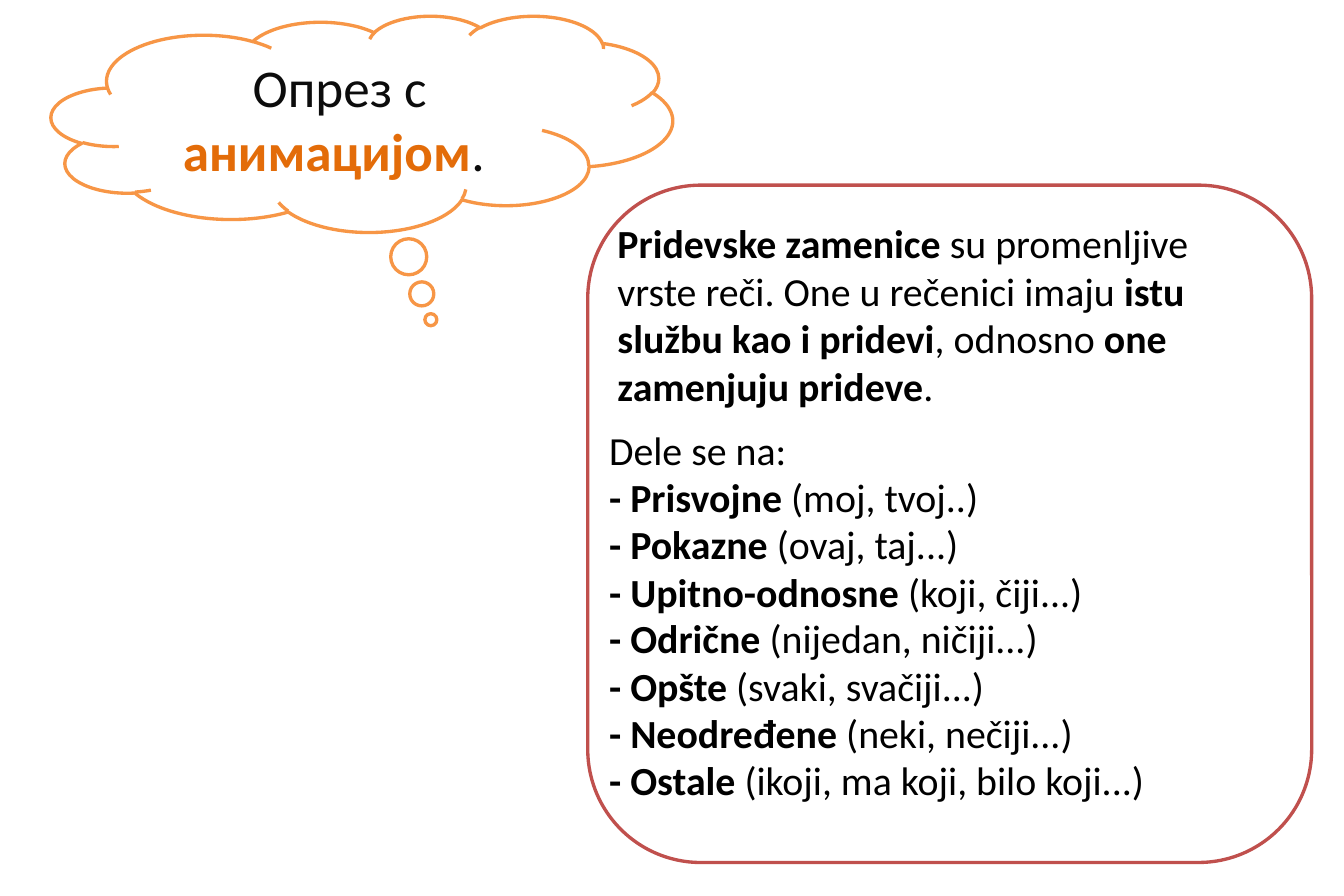
from pptx import Presentation
from pptx.dml.color import RGBColor
from pptx.enum import shapes, text
from pptx.util import Inches, Pt

COLORS = {
    "white": "FFFFFF", "black": "000000", "ink": "0C0C0C",
    "cloud": "F79646", "accent": "E36C09", "frame": "C0504D",
}


def add_outlined(kind, left, top, width, height, color, adjustments):
    """Add a white preset shape with a coloured outline."""
    shape = page.shapes.add_shape(
        kind, Inches(left), Inches(top), Inches(width), Inches(height))
    shape.shadow.inherit = False
    shape.fill.solid()
    shape.fill.fore_color.rgb = RGBColor.from_string(COLORS["white"])
    shape.line.color.rgb = RGBColor.from_string(COLORS[color])
    shape.line.width = Pt(2)
    for index, value in enumerate(adjustments):
        shape.adjustments[index] = value
    return shape


def write_spans(para, size, spans):
    """Fill a paragraph with (wording, bold, colour) spans."""
    para.font.name = "Calibri"
    para.font.size = Pt(size)
    for wording, bold, color in spans:
        span = para.add_run()
        span.text = wording
        span.font.bold = bold
        span.font.color.rgb = RGBColor.from_string(COLORS[color])


deck = Presentation()
deck.slide_width = Inches(11.25)
deck.slide_height = Inches(7.5)
page = deck.slides.add_slide(deck.slide_layouts[6])

cloud = add_outlined(shapes.MSO_SHAPE.CLOUD_CALLOUT,
                     0.43, 0.13, 5.2, 1.81, "cloud", [0.111, 0.907])
cloud.text_frame.vertical_anchor = text.MSO_ANCHOR.MIDDLE
warning = cloud.text_frame.paragraphs[0]
warning.alignment = text.PP_ALIGN.CENTER
write_spans(warning, 32, [
    ("Опрез с ", False, "ink"),
    ("анимацијом", True, "accent"),
    (". ", False, "ink"),
])

add_outlined(shapes.MSO_SHAPE.ROUNDED_RECTANGLE,
             4.92, 1.55, 6.06, 5.67, "frame", [0.167])

definition = [
    ("Pridevske zamenice", True),
    (" su promenljive vrste reči. One u rečenici imaju ", False),
    ("istu službu kao i pridevi", True),
    (", odnosno ", False),
    ("one zamenjuju prideve", True),
    (".", False),
]
kinds = [
    [("Dele se na:", False)],
    [("- Prisvojne ", True), ("(moj, tvoj..)", False)],
    [("- Pokazne ", True), ("(ovaj, taj...)", False)],
    [("- Upitno-odnosne ", True), ("(koji, čiji...)", False)],
    [("- Odrične ", True), ("(nijedan, ničiji...)", False)],
    [("- Opšte ", True), ("(svaki, svačiji...)", False)],
    [("- Neodređene ", True), ("(neki, nečiji...)", False)],
    [("- Ostale ", True), ("(ikoji, ma koji, bilo koji...)", False)],
]

# The definition stands alone; the list runs in boxes of two lines each.
blocks = [(5.07, 1.78, 1.72, [definition])]
for first in range(0, len(kinds), 2):
    blocks.append((5, 3.51 + 0.79 * first / 2, 0.91, kinds[first:first + 2]))

for left, top, height, lines in blocks:
    box = page.shapes.add_textbox(
        Inches(left), Inches(top), Inches(5.62), Inches(height))
    frame = box.text_frame
    frame.word_wrap = True
    for number, line in enumerate(lines):
        para = frame.add_paragraph() if number else frame.paragraphs[0]
        write_spans(para, 24, [(*span, "black") for span in line])

deck.save("out.pptx")
